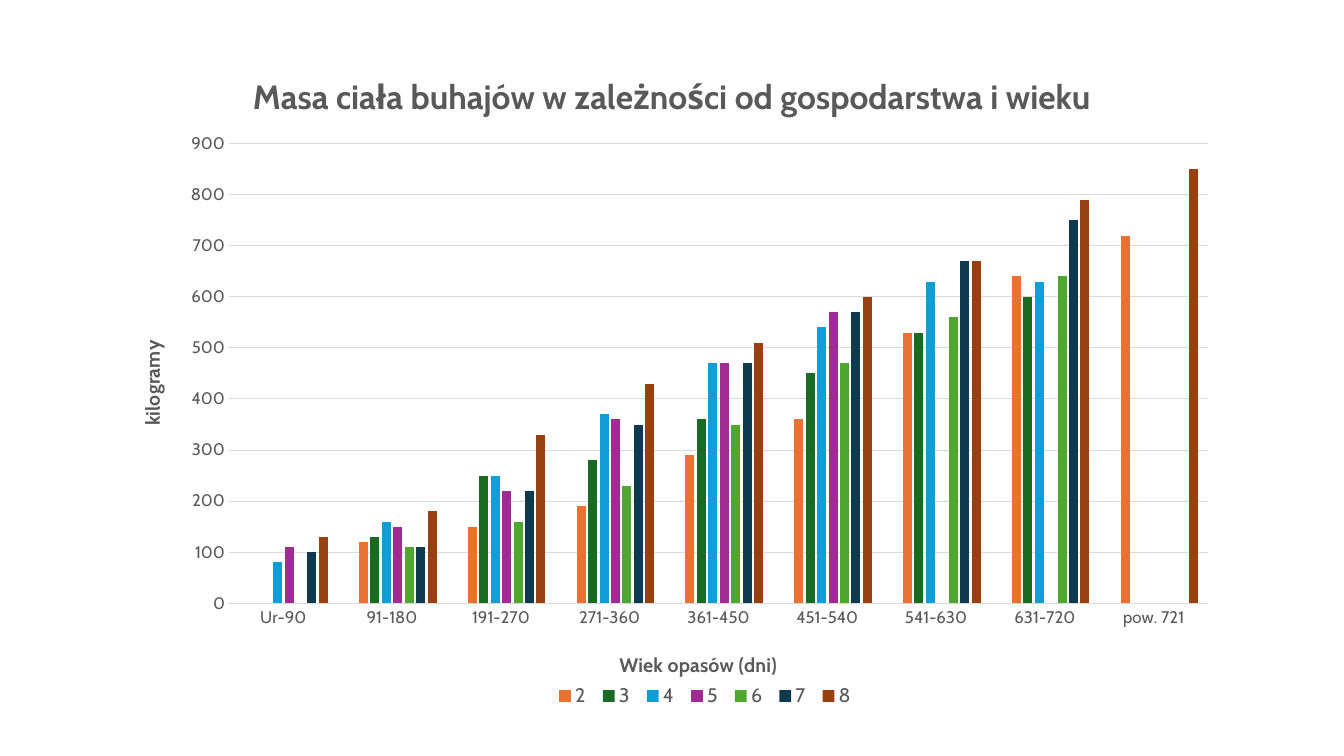
import pptx
import pptx.chart.data
import pptx.dml.color
import pptx.enum.chart
import pptx.oxml
import pptx.oxml.ns
import pptx.util

FONT = "Cabin"
COLORS = {
    "text": "595959", "grid": "D9D9D9",
    "": "156082", "2": "E97132", "3": "196B24", "4": "0F9ED5",
    "5": "A02B93", "6": "4EA72E", "7": "0D3A4E", "8": "994010",
}
TITLE = "Masa ciała buhajów w zależności od gospodarstwa i wieku"
AGE_TITLE = "Wiek opasów (dni)"
WEIGHT_TITLE = "kilogramy"
AGES = ["Ur-90", "91-180", "191-270", "271-360", "361-450",
        "451-540", "541-630", "631-720", "pow. 721"]
FARM_WEIGHTS = {
    "": [None] * len(AGES),
    "2": [None, 120, 150, 190, 290, 360, 530, 640, 720],
    "3": [None, 130, 250, 280, 360, 450, 530, 600, None],
    "4": [80, 160, 250, 370, 470, 540, 630, 630, None],
    "5": [110, 150, 220, 360, 470, 570, None, None, None],
    "6": [None, 110, 160, 230, 350, 470, 560, 640, None],
    "7": [100, 110, 220, 350, 470, 570, 670, 750, None],
    "8": [130, 180, 330, 430, 510, 600, 670, 790, 850],
}
CHART_BOX = (2.84, 0.99, 28.17, 17.42)


def rgb(name):
    return pptx.dml.color.RGBColor.from_string(COLORS[name])


def style_font(font, size, bold=False):
    font.name = FONT
    font.size = pptx.util.Pt(size)
    font.bold = bold
    font.color.rgb = rgb("text")


def style_line(line):
    line.color.rgb = rgb("grid")
    line.width = pptx.util.Pt(0.75)


def place(parent, index, **position):
    for layout in parent.findall(pptx.oxml.ns.qn("c:layout")):
        parent.remove(layout)
    modes = "".join(f'<c:{key}Mode val="edge"/>' for key in "xy")
    values = "".join(f'<c:{key} val="{value}"/>' for key, value in position.items())
    target = '<c:layoutTarget val="inner"/>' if parent.tag.endswith("plotArea") else ""
    parent.insert(index, pptx.oxml.parse_xml(
        f'<c:layout {pptx.oxml.ns.nsdecls("c")}><c:manualLayout>'
        f'{target}{modes}{values}</c:manualLayout></c:layout>'))


def write_title(title, text, size, x, y):
    title.text_frame.text = text
    style_font(title.text_frame.paragraphs[0].runs[0].font, size, True)
    place(title._element, 1, x=x, y=y)


def style_axis(axis):
    axis.major_tick_mark = axis.minor_tick_mark = pptx.enum.chart.XL_TICK_MARK.NONE
    style_font(axis.tick_labels.font, 12)


def add_weight_chart(slide):
    data = pptx.chart.data.CategoryChartData()
    data.categories = AGES
    for farm, weights in FARM_WEIGHTS.items():
        data.add_series(farm, weights)
    chart = slide.shapes.add_chart(
        pptx.enum.chart.XL_CHART_TYPE.COLUMN_CLUSTERED,
        *map(pptx.util.Cm, CHART_BOX), data).chart
    style_font(chart.font, 10)

    plot = chart.plots[0]
    plot.vary_by_categories = False
    plot.gap_width = 219
    plot.overlap = -27
    for series in plot.series:
        series.format.fill.solid()
        series.format.fill.fore_color.rgb = rgb(series.name)
    place(chart._chartSpace.chart.plotArea, 0, x=0.104, y=0.151, w=0.876, h=0.665)

    chart.has_title = True
    write_title(chart.chart_title, TITLE, 24, 0.12, 0.04)

    ages = chart.category_axis
    style_axis(ages)
    style_line(ages.format.line)
    write_title(ages.axis_title, AGE_TITLE, 14, 0.45, 0.88)

    weights = chart.value_axis
    style_axis(weights)
    weights.minimum_scale = 0
    weights.maximum_scale = 900
    weights.major_unit = 100
    weights.format.line.fill.background()
    style_line(weights.major_gridlines.format.line)
    write_title(weights.axis_title, WEIGHT_TITLE, 14, 0.02, 0.43)
    body = weights.axis_title._element.find(".//" + pptx.oxml.ns.qn("a:bodyPr"))
    body.set("rot", "-5400000")
    body.set("vert", "horz")

    chart.has_legend = True
    legend = chart.legend
    legend.position = pptx.enum.chart.XL_LEGEND_POSITION.BOTTOM
    legend.include_in_layout = False
    style_font(legend.font, 14)
    legend._element.insert(1, pptx.oxml.parse_xml(
        f'<c:legendEntry {pptx.oxml.ns.nsdecls("c")}>'
        '<c:idx val="0"/><c:delete val="1"/></c:legendEntry>'))
    place(legend._element, 2, x=0.39, y=0.93, w=0.28, h=0.04)


def main():
    presentation = pptx.Presentation()
    presentation.slide_width = pptx.util.Cm(33.87)
    presentation.slide_height = pptx.util.Cm(19.05)
    slide = presentation.slides.add_slide(presentation.slide_layouts[6])
    add_weight_chart(slide)
    presentation.save("out.pptx")


if __name__ == "__main__":
    main()
